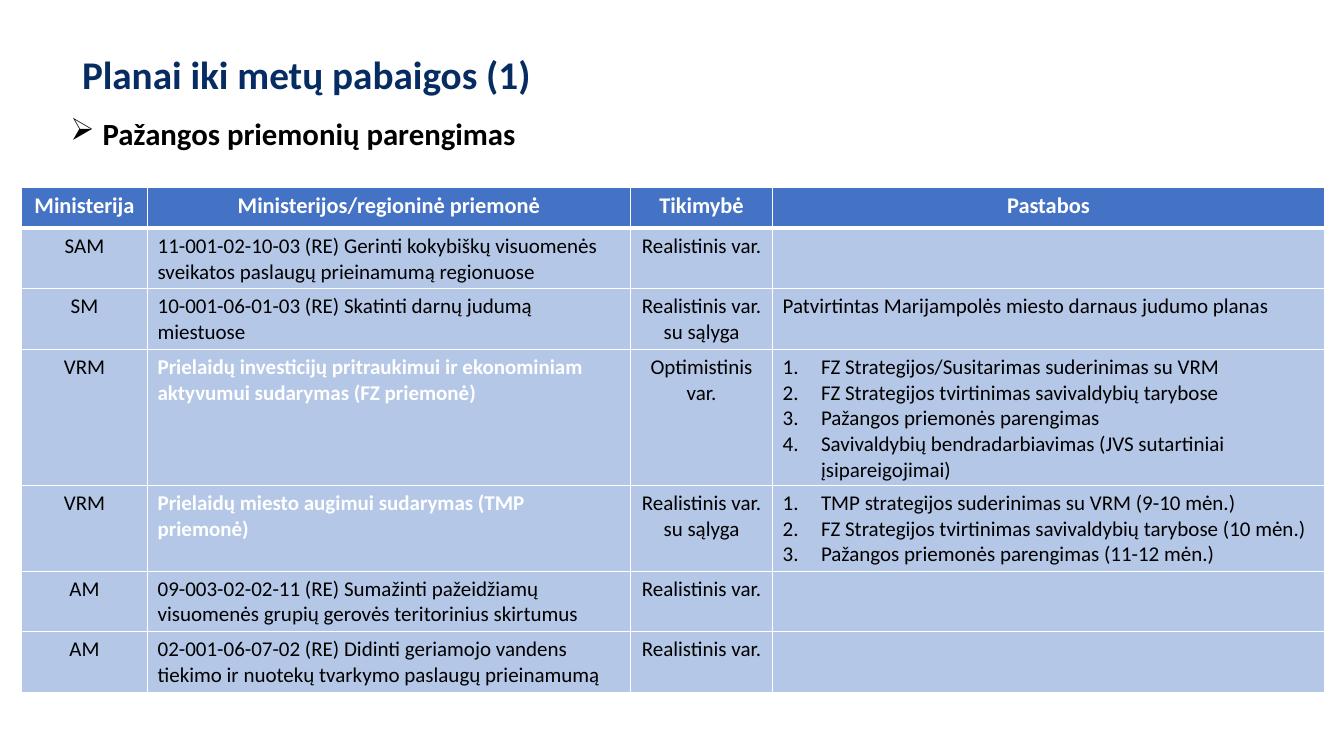
from lxml.etree import SubElement as Sub
from pptx import Presentation as Deck
from pptx.dml.color import RGBColor as Rgb
from pptx.enum.text import MSO_ANCHOR as Anchor, PP_ALIGN as Align
from pptx.oxml import parse_xml as to_xml
from pptx.oxml.ns import qn, nsdecls
from pptx.util import Inches, Pt

NAVY, BLUE, PALE = "072C62", "4472C4", "B4C7E7"
WHITE, BLACK = "FFFFFF", "000000"

HEAD = ["Ministerija", "Ministerijos/regioninė priemonė", "Tikimybė", "Pastabos"]
REAL = "Realistinis var."
ROWS = [
    ["SAM", "11-001-02-10-03 (RE) Gerinti kokybiškų visuomenės sveikatos "
     "paslaugų prieinamumą regionuose", REAL, ""],
    ["SM", "10-001-06-01-03 (RE) Skatinti darnų judumą miestuose",
     REAL + " su sąlyga",
     "Patvirtintas Marijampolės miesto darnaus judumo planas"],
    ["VRM", "Prielaidų investicijų pritraukimui ir ekonominiam aktyvumui "
     "sudarymas (FZ priemonė)", "Optimistinis var.",
     ["FZ Strategijos/Susitarimas suderinimas su VRM",
      "FZ Strategijos tvirtinimas savivaldybių tarybose",
      "Pažangos priemonės parengimas",
      "Savivaldybių bendradarbiavimas (JVS sutartiniai įsipareigojimai)"]],
    ["VRM", "Prielaidų miesto augimui sudarymas (TMP priemonė)",
     REAL + " su sąlyga",
     ["TMP strategijos suderinimas su VRM (9-10 mėn.)",
      "FZ Strategijos tvirtinimas savivaldybių tarybose (10 mėn.)",
      "Pažangos priemonės parengimas (11-12 mėn.)"]],
    ["AM", "09-003-02-02-11 (RE) Sumažinti pažeidžiamų visuomenės grupių "
     "gerovės teritorinius skirtumus", REAL, ""],
    ["AM", "02-001-06-07-02 (RE) Didinti geriamojo vandens tiekimo ir "
     "nuotekų tvarkymo paslaugų prieinamumą", REAL, ""],
]


def hue(code):
    return Rgb.from_string(code)


def write(frame, text, size=15, color=BLACK, bold=False, align=Align.LEFT,
          space=None, mark=None, dent=0, font="Calibri"):
    """Fill a frame with one paragraph per item; mark is (tag, attributes)."""
    for i, line in enumerate([text] if isinstance(text, str) else text):
        para = frame.add_paragraph() if i else frame.paragraphs[0]
        para.alignment = align
        if space:
            para.line_spacing = space
        if mark:
            props = para._p.get_or_add_pPr()
            props.set("marL", str(Inches(dent)))
            props.set("indent", str(-Inches(dent)))
            tag, attrs = mark
            Sub(props, qn(tag), attrs)
        if line:
            run = para.add_run()
            run.text = line
            run.font.name, run.font.size, run.font.bold = font, Pt(size), bold
            run.font.color.rgb = hue(color)


def edge(cell, **sides):
    """Draw white cell borders; widths in points, in the order L, R, T, B."""
    props = cell._tc.get_or_add_tcPr()
    for i, (side, width) in enumerate(sides.items()):
        props.insert(i, to_xml(
            f'<a:ln{side} {nsdecls("a")} w="{Pt(width)}"><a:solidFill>'
            f'<a:srgbClr val="{WHITE}"/></a:solidFill></a:ln{side}>'))


class Page:
    """One slide; lengths are percent of its width and height."""

    def __init__(self):
        self.deck = Deck()
        self.deck.slide_width, self.deck.slide_height = Inches(13.33), Inches(7.5)
        self.slide = self.deck.slides.add_slide(self.deck.slide_layouts[5])

    def wide(self, part):
        return round(self.deck.slide_width * part / 100)

    def high(self, part):
        return round(self.deck.slide_height * part / 100)

    def area(self, x, y, w, h):
        return self.wide(x), self.high(y), self.wide(w), self.high(h)

    def title(self, text, *area, **style):
        shape = self.slide.shapes.title
        shape.left, shape.top, shape.width, shape.height = self.area(*area)
        frame = shape.text_frame
        frame.word_wrap, frame.vertical_anchor = True, Anchor.MIDDLE
        frame.margin_left = frame.margin_right = self.wide(1)
        frame.margin_top = frame.margin_bottom = self.high(0.9)
        write(frame, text, **style)

    def text(self, text, *area, **style):
        frame = self.slide.shapes.add_textbox(*self.area(*area)).text_frame
        frame.word_wrap = True
        write(frame, text, **style)

    def table(self, head, rows, x, y, cols, step):
        count = len(rows) + 1
        area = self.area(x, y, sum(cols), step * count)
        grid = self.slide.shapes.add_table(count, len(cols), *area).table
        for col, part in zip(grid.columns, cols):
            col.width = self.wide(part)
        for r, row in enumerate([head] + rows):
            for c, text in enumerate(row):
                cell = grid.cell(r, c)
                cell.fill.solid()
                cell.fill.fore_color.rgb = hue(PALE if r else BLUE)
                edge(cell, L=1, R=1, T=3 if r == 1 else 1, B=1 if r else 3)
                write(cell.text_frame, text, **self.look(r, c, row))

    def look(self, r, c, row):
        """Text format of a table cell."""
        if r == 0:
            return dict(size=16, color=WHITE, bold=True, align=Align.CENTER)
        if c in (0, 2):
            return dict(align=Align.CENTER)
        if c == 1 and row[0] == "VRM":
            return dict(color=WHITE, bold=True)
        if isinstance(row[c], list):
            return dict(mark=("a:buAutoNum", {"type": "arabicPeriod"}), dent=0.38)
        return {}


def main():
    page = Page()
    # Heading
    page.title("Planai iki metų pabaigos (1)", 5.1, 5.73, 91.75, 8.13,
               size=28, color=NAVY, bold=True)
    # Subheading
    page.text(" Pažangos priemonių parengimas", 4.5, 15.07, 91.07, 45.87,
              size=22, bold=True, space=0.9, dent=0.25,
              mark=("a:buChar", {"char": "➢"}))
    # Table of measures
    page.table(HEAD, ROWS, 1.6, 24.8, cols=[9.38, 35.93, 10.58, 41.04], step=5.4)
    page.deck.save("out.pptx")


if __name__ == "__main__":
    main()
